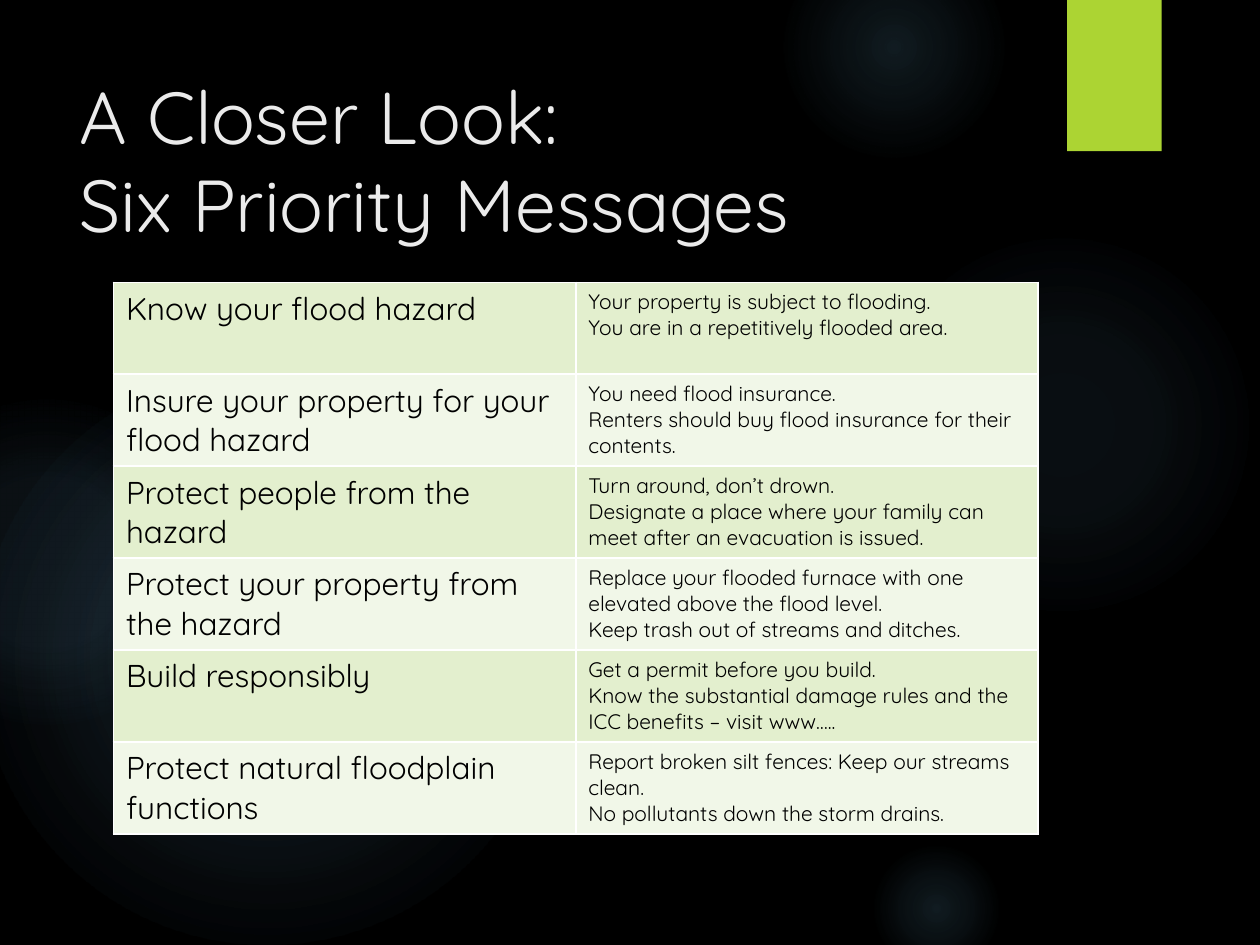
"""Build the six priority flood messages slide."""
from typing import NamedTuple

from lxml.etree import SubElement
from pptx import Presentation
from pptx.dml.color import RGBColor
from pptx.enum.shapes import MSO_SHAPE as Preset
from pptx.enum.text import MSO_ANCHOR as Anchor, PP_ALIGN as Align
from pptx.oxml import parse_xml
from pptx.oxml.ns import nsdecls, qn
from pptx.util import Inches, Pt

FONT = "Quicksand"
GLOW_COLOR = "7AC4F0"
BAND_COLORS = ("E3EFCE", "F1F7E8")


class Glow(NamedTuple):
    left: float
    top: float
    size: float
    center_alpha: int
    middle_alpha: int
    fade_end: int


class Message(NamedTuple):
    topic: str
    details: tuple[str, str]


GLOWS = (
    Glow(6.89, 1.83, 3.08, 7, 6, 69),
    Glow(6.22, -0.5, 1.75, 14, 7, 73),
    Glow(6.89, 6.67, 1.08, 14, 7, 66),
    Glow(-0.17, 2.92, 4.58, 11, 10, 75),
    Glow(-0.92, 3.17, 2.58, 8, 8, 72),
)

MESSAGES = (
    Message("Know your flood hazard",
            ("Your property is subject to flooding.",
             "You are in a repetitively flooded area.")),
    Message("Insure your property for your flood hazard",
            ("You need flood insurance.",
             "Renters should buy flood insurance for their contents.")),
    Message("Protect people from the hazard",
            ("Turn around, don’t drown.",
             "Designate a place where your family can meet after an evacuation is issued.")),
    Message("Protect your property from the hazard",
            ("Replace your flooded furnace with one elevated above the flood level.",
             "Keep trash out of streams and ditches.")),
    Message("Build responsibly",
            ("Get a permit before you build.",
             "Know the substantial damage rules and the ICC benefits – visit www…..")),
    Message("Protect natural floodplain functions",
            ("Report broken silt fences: Keep our streams clean.",
             "No pollutants down the storm drains.")),
)


def paint(fill, color: str) -> None:
    fill.solid()
    fill.fore_color.rgb = RGBColor.from_string(color)


def format_text(frame, size: float, color: str) -> None:
    for para in frame.paragraphs:
        para.alignment = Align.LEFT
        for span in para.runs:
            span.font.name = FONT
            span.font.size = Pt(size)
            span.font.color.rgb = RGBColor.from_string(color)


def add_glow(page, glow: Glow) -> None:
    size = Inches(glow.size)
    circle = page.shapes.add_shape(
        Preset.OVAL, Inches(glow.left), Inches(glow.top), size, size)
    circle.shadow.inherit = False
    circle.line.fill.background()
    stops = ((0, glow.center_alpha), (36, glow.middle_alpha), (glow.fade_end, 0))
    stop_xml = "".join(
        f'<a:gs pos="{place * 1000}"><a:srgbClr val="{GLOW_COLOR}">'
        f'<a:alpha val="{alpha * 1000}"/></a:srgbClr></a:gs>'
        for place, alpha in stops)
    gradient = parse_xml(
        f'<a:gradFill {nsdecls("a")}><a:gsLst>{stop_xml}</a:gsLst>'
        '<a:path path="circle"><a:fillToRect l="50000" t="50000" r="50000" b="50000"/>'
        '</a:path></a:gradFill>')
    circle.element.spPr.find(qn("a:prstGeom")).addnext(gradient)


def add_tab(page):
    tab = page.shapes.add_shape(
        Preset.RECTANGLE, Inches(8.47), 0, Inches(0.75), Inches(1.2))
    paint(tab.fill, "ACD433")
    tab.line.fill.background()
    tab.shadow.inherit = False
    tab.element.spPr.find(qn("a:effectLst")).append(parse_xml(
        f'<a:outerShdw {nsdecls("a")} blurRad="{Pt(3)}" dist="{Pt(2)}" dir="5400000">'
        '<a:srgbClr val="000000"><a:alpha val="45000"/></a:srgbClr></a:outerShdw>'))
    return tab


def place_title(page, below) -> None:
    title = page.shapes.title
    title.left, title.top = Inches(0.53), Inches(0.5)
    title.width, title.height = Inches(8.51), Inches(1.53)
    title.text_frame.text = "A Closer Look: \vSix Priority Messages"
    title.text_frame.vertical_anchor = Anchor.MIDDLE
    format_text(title.text_frame, 42, "EBEBEB")
    below.element.addnext(title.element)


def fill_cell(cell, text: str, size: float, color: str) -> None:
    cell.text_frame.text = text
    format_text(cell.text_frame, size, "000000")
    properties = cell._tc.get_or_add_tcPr()
    for side in ("a:lnL", "a:lnR", "a:lnT", "a:lnB"):
        border = SubElement(properties, qn(side), w=str(Pt(1)))
        solid = SubElement(border, qn("a:solidFill"))
        SubElement(solid, qn("a:srgbClr"), val="FFFFFF")
    paint(cell.fill, color)


def add_messages(page) -> None:
    row_height = 0.73
    frame = page.shapes.add_table(
        len(MESSAGES), 2, Inches(0.9), Inches(2.24),
        Inches(7.34), Inches(row_height * len(MESSAGES)))
    table = frame.table
    table.first_row = False
    table.horz_banding = False
    for index, message in enumerate(MESSAGES):
        table.rows[index].height = Inches(row_height)
        color = BAND_COLORS[index % 2]
        fill_cell(table.cell(index, 0), message.topic, 18, color)
        fill_cell(table.cell(index, 1), "\n".join(message.details), 12, color)


def main() -> None:
    deck = Presentation()
    deck.slide_width, deck.slide_height = Inches(10), Inches(7.5)
    page = deck.slides.add_slide(deck.slide_layouts.get_by_name("Title Only"))
    paint(page.background.fill, "000000")
    for glow in GLOWS:
        add_glow(page, glow)
    place_title(page, below=add_tab(page))
    add_messages(page)
    deck.save("out.pptx")


if __name__ == "__main__":
    main()
